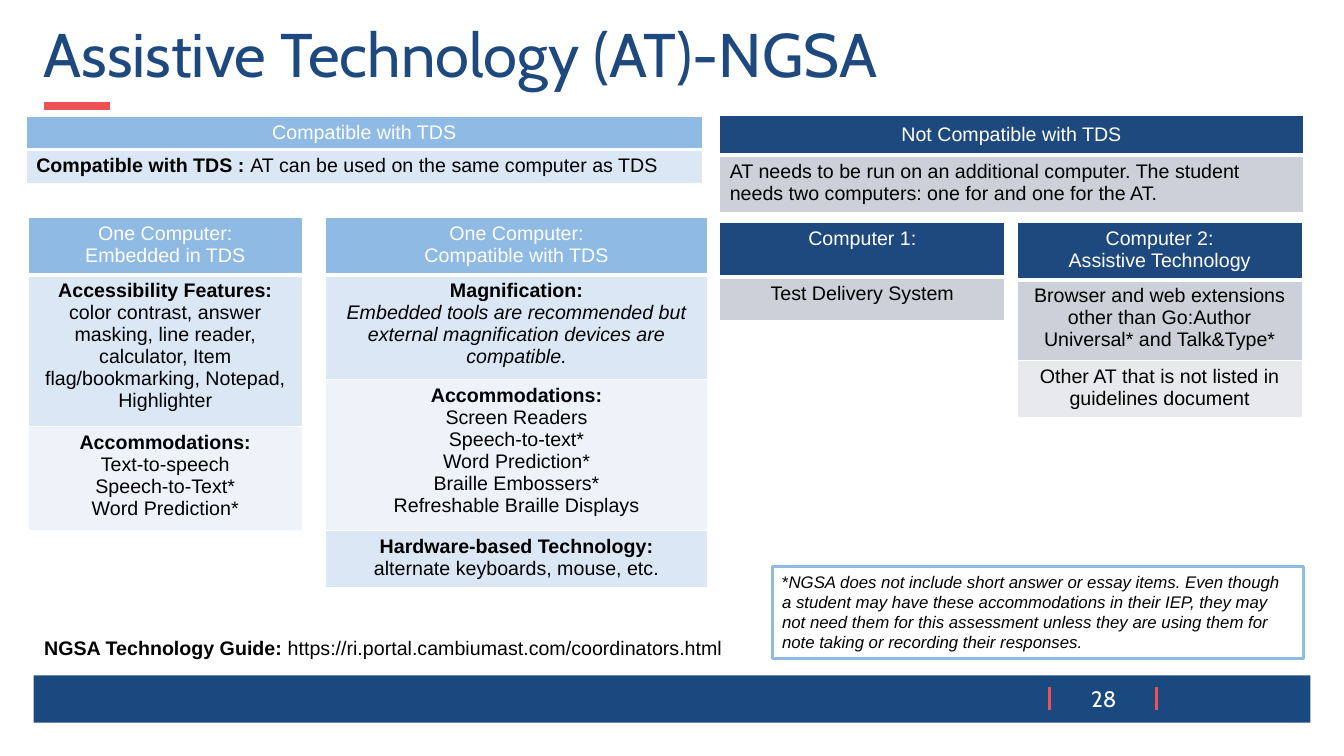
from lxml.etree import SubElement
from pptx import Presentation
from pptx.dml.color import RGBColor
from pptx.enum.shapes import MSO_CONNECTOR, MSO_SHAPE
from pptx.enum.text import MSO_ANCHOR, MSO_AUTO_SIZE, PP_ALIGN
from pptx.oxml.ns import qn
from pptx.util import Inches, Pt

NAVY = RGBColor(0x1E, 0x49, 0x7F)
BAR_NAVY = RGBColor(0x1A, 0x49, 0x7F)
RED = RGBColor(0xEC, 0x51, 0x53)
SKY = RGBColor(0x8F, 0xBA, 0xE4)
SKY_LIGHT = RGBColor(0xDB, 0xE7, 0xF5)
SKY_PALE = RGBColor(0xEE, 0xF3, 0xFA)
GREY = RGBColor(0xCD, 0xD0, 0xD8)
GREY_PALE = RGBColor(0xE8, 0xE9, 0xEC)
WHITE = RGBColor(0xFF, 0xFF, 0xFF)
BLACK = RGBColor(0, 0, 0)

WIDTH, HEIGHT = Inches(13.33), Inches(7.5)
COLUMNS, ROWS = 40, 30
BODY_FONT, HEAD_FONT = "Arial", "Cabin"


def across(columns):
    return round(WIDTH * columns / COLUMNS)


def down(rows):
    return round(HEIGHT * rows / ROWS)


def place(left, top, width, height):
    return across(left), down(top), across(width), down(height)


class SlideBuilder:
    """Draws on one slide, with lengths in grid columns and rows."""

    def __init__(self, slide):
        self.slide = slide
        self.shapes = slide.shapes

    def fill_text(self, frame, paragraphs, color=BLACK, size=14, name=BODY_FONT,
                  align=PP_ALIGN.LEFT):
        """Fill a frame; each paragraph is a list of (text, style), style being "", "b" or "i"."""
        frame.word_wrap = True
        for index, runs in enumerate(paragraphs):
            paragraph = frame.add_paragraph() if index else frame.paragraphs[0]
            paragraph.alignment = align
            font = paragraph.font
            font.name, font.size, font.color.rgb = name, Pt(size), color
            styles = {style for _, style in runs}
            for text, style in runs:
                run = paragraph.add_run()
                run.text = text
                target = font if len(styles) == 1 else run.font
                target.bold, target.italic = style == "b", style == "i"

    def title(self, text, box):
        title = self.shapes.title
        title.left, title.top, title.width, title.height = place(*box)
        frame = title.text_frame
        frame.auto_size = MSO_AUTO_SIZE.NONE
        frame.vertical_anchor = MSO_ANCHOR.MIDDLE
        self.fill_text(frame, [[(text, "")]], NAVY, 44, HEAD_FONT)
        frame.paragraphs[0].line_spacing = 0.9

    def line(self, start, end, weight):
        line = self.shapes.add_connector(
            MSO_CONNECTOR.STRAIGHT, across(start[0]), down(start[1]), across(end[0]), down(end[1]))
        line.line.color.rgb, line.line.width = RED, Pt(weight)
        SubElement(line._element.spPr, qn("a:effectLst"))

    def rectangle(self, box, fill, outline=None):
        shape = self.shapes.add_shape(MSO_SHAPE.RECTANGLE, *place(*box))
        shape.shadow.inherit = False
        shape.fill.solid()
        shape.fill.fore_color.rgb = fill
        if outline:
            shape.line.color.rgb, shape.line.width = outline, Pt(2)
        else:
            shape.line.fill.background()
        shape.text_frame.vertical_anchor = MSO_ANCHOR.TOP
        return shape

    def text(self, box, paragraphs, anchor=MSO_ANCHOR.TOP, **style):
        frame = self.shapes.add_textbox(*place(*box)).text_frame
        frame.vertical_anchor = anchor
        self.fill_text(frame, paragraphs, **style)

    def cell_borders(self, cell, bottom):
        properties = cell._tc.get_or_add_tcPr()
        for side, weight in (("L", 1), ("R", 1), ("T", 1), ("B", bottom)):
            border = SubElement(properties, qn(f"a:ln{side}"), w=str(Pt(weight)))
            SubElement(SubElement(border, qn("a:solidFill")), qn("a:srgbClr"), val=str(WHITE))

    def table(self, left, top, width, rows, header_fill, body_fills, centred=True):
        """Draw a one-column table; rows hold (height, paragraphs), the first being the header."""
        height = sum(row_height for row_height, _ in rows)
        table = self.shapes.add_table(len(rows), 1, *place(left, top, width, height)).table
        table.first_row = table.horz_banding = False
        for index, (row_height, paragraphs) in enumerate(rows):
            header = index == 0
            table.rows[index].height = down(row_height)
            cell = table.cell(index, 0)
            self.cell_borders(cell, 3 if header else 1)
            cell.fill.solid()
            cell.fill.fore_color.rgb = header_fill if header else body_fills[(index - 1) % 2]
            if header and not centred:
                cell.vertical_anchor = MSO_ANCHOR.MIDDLE
            self.fill_text(cell.text_frame, paragraphs, WHITE if header else BLACK,
                           align=PP_ALIGN.CENTER if header or centred else PP_ALIGN.LEFT)


def plain(*lines):
    return [[(line, "")] for line in lines]


def headed(heading, *lines):
    return [[(heading, "b")], *plain(*lines)]


def add_compatible_tables(builder):
    blues = SKY, (SKY_LIGHT, SKY_PALE)
    builder.table(0.78, 4.6, 20.13, [
        (1.28, plain("Compatible with TDS")),
        (1.28, [[("Compatible with TDS : ", "b"),
                 ("AT can be used on the same computer as TDS", "")]]),
    ], *blues, centred=False)
    builder.table(0.84, 8.64, 8.16, [
        (2.16, plain("One Computer:", "Embedded in TDS")),
        (5.64, [[("Accessibility Features: ", "b"),
                 ("color contrast, answer masking, line reader, calculator, Item "
                  "flag/bookmarking, Notepad, Highlighter", "")]]),
        (3.88, headed("Accommodations:", "Text-to-speech", "Speech-to-Text*", "Word Prediction*")),
    ], *blues)
    builder.table(9.69, 8.64, 11.37, [
        (2.16, plain("One Computer:", "Compatible with TDS")),
        (3.88, [[("Magnification:", "b")],
                [("Embedded tools are recommended but external magnification devices "
                  "are compatible.", "i")]]),
        (5.64, headed("Accommodations:", "Screen Readers", "Speech-to-text*", "Word Prediction*",
                      "Braille Embossers*", "Refreshable Braille Displays")),
        (2.16, headed("Hardware-based Technology:", "alternate keyboards, mouse, etc.")),
    ], *blues)


def add_not_compatible_tables(builder):
    greys = NAVY, (GREY, GREY_PALE)
    builder.table(21.42, 4.56, 17.37, [
        (1.6, plain("Not Compatible with TDS")),
        (2.16, plain("AT needs to be run on an additional computer. The student needs two "
                     "computers: one for and one for the AT.")),
    ], *greys, centred=False)
    builder.table(21.42, 8.84, 8.49, [
        (2.16, plain("Computer 1:")),
        (1.72, plain("Test Delivery System")),
    ], *greys)
    builder.table(30.27, 8.84, 8.49, [
        (2.16, plain("Computer 2:", "Assistive Technology")),
        (3.04, plain("Browser and web extensions other than Go:Author Universal* and Talk&Type*")),
        (2.16, plain("Other AT that is not listed in guidelines document")),
    ], *greys)


def add_footer(builder):
    builder.rectangle((1, 26.8, 38, 1.88), BAR_NAVY)
    for column in (31.23, 34.41):
        builder.line((column, 27.28), (column, 28.16), 2.25)
    builder.text((31.89, 27, 1.92, 1.48), plain("28"), MSO_ANCHOR.MIDDLE,
                 color=WHITE, size=16, name=HEAD_FONT, align=PP_ALIGN.CENTER)


def main():
    presentation = Presentation()
    presentation.slide_width, presentation.slide_height = WIDTH, HEIGHT
    builder = SlideBuilder(presentation.slides.add_slide(presentation.slide_layouts[5]))
    builder.title("Assistive Technology (AT)-NGSA", (1, 0.76, 38, 3.08))
    builder.line((1.3, 4.2), (3.27, 4.2), 6)
    add_footer(builder)
    add_compatible_tables(builder)
    add_not_compatible_tables(builder)
    note = builder.rectangle((22.98, 22.48, 15.81, 3.64), WHITE, SKY)
    builder.fill_text(note.text_frame, [[
        ("*", ""),
        ("NGSA does not include short answer or essay items. Even though a student may have "
         "these accommodations in their IEP, they may not need them for this assessment unless "
         "they are using them for note taking or recording their responses.", "i")]], size=12)
    builder.text((1.02, 25.04, 26.85, 1.36), [[
        ("NGSA Technology Guide: ", "b"),
        ("https://ri.portal.cambiumast.com/coordinators.html", "")]])
    presentation.save("out.pptx")


if __name__ == "__main__":
    main()
